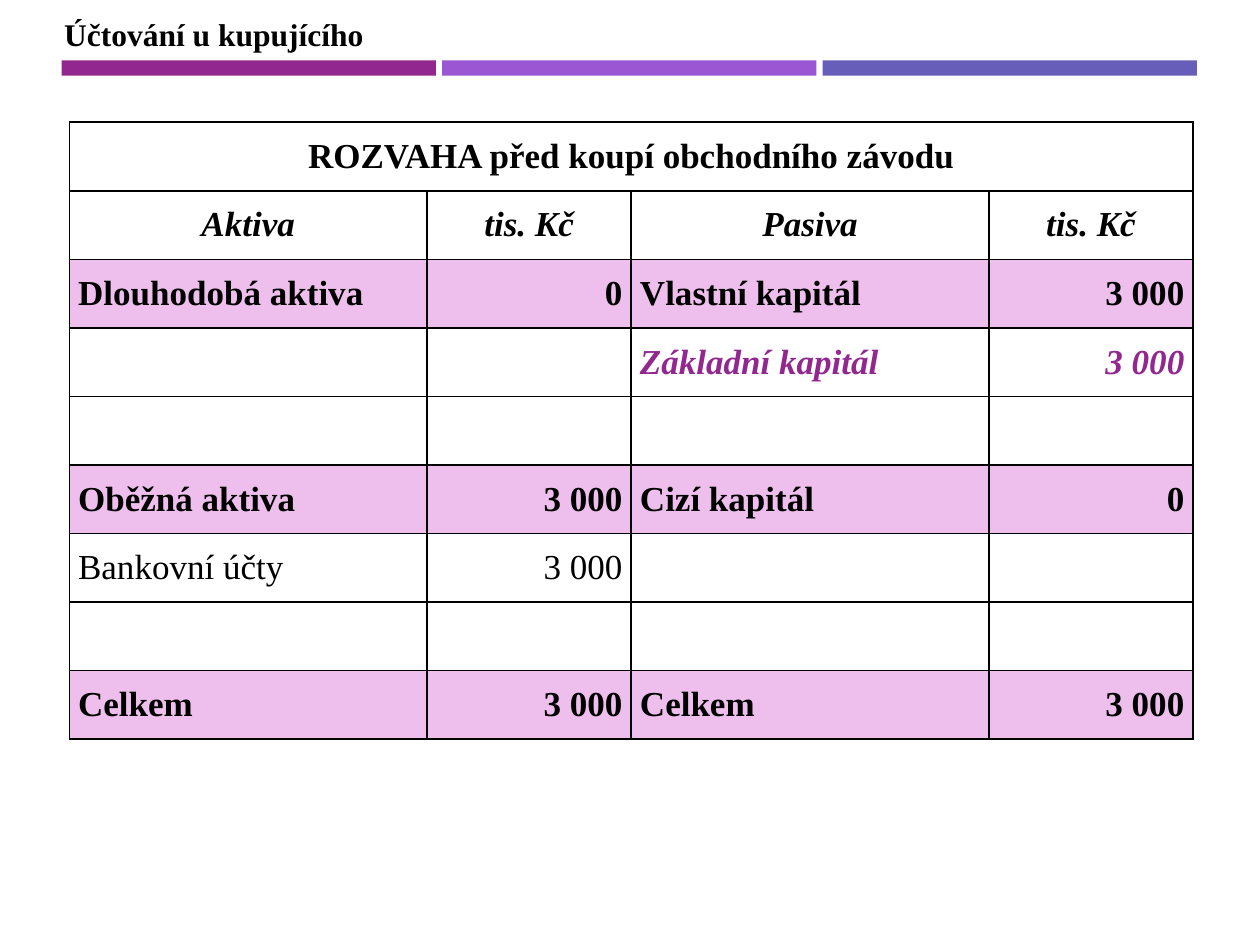
from typing import NamedTuple

from lxml.etree import SubElement
from pptx import Presentation
from pptx.dml.color import RGBColor
from pptx.enum.shapes import MSO_SHAPE as Shape
from pptx.enum.text import MSO_ANCHOR as Anchor, MSO_AUTO_SIZE as Fit, PP_ALIGN as Align
from pptx.oxml.ns import qn
from pptx.util import Inches, Pt

FONT = "Times New Roman"
BLACK = RGBColor(0x00, 0x00, 0x00)
WHITE = RGBColor(0xFF, 0xFF, 0xFF)
PLUM = RGBColor(0x92, 0x27, 0x8F)
VIOLET = RGBColor(0x9B, 0x57, 0xD3)
INDIGO = RGBColor(0x66, 0x5E, 0xB8)
PINK = RGBColor(0xEE, 0xBF, 0xED)


class Row(NamedTuple):
    texts: tuple[str, ...]
    fill: RGBColor | None = None
    color: RGBColor = BLACK
    bold: bool = True
    italic: bool = False
    center: bool = False


HEAD = "ROZVAHA před koupí obchodního závodu"
BLANK = Row(("", "", "", ""))
ROWS = [
    Row((HEAD, "", "", ""), center=True),
    Row(("Aktiva", "tis. Kč", "Pasiva", "tis. Kč"), italic=True, center=True),
    Row(("Dlouhodobá aktiva", "0", "Vlastní kapitál", "3 000"), PINK),
    Row(("", "", "Základní kapitál", "3 000"), color=PLUM, italic=True),
    BLANK,
    Row(("Oběžná aktiva", "3 000", "Cizí kapitál", "0"), PINK),
    Row(("Bankovní účty", "3 000", "", ""), bold=False),
    BLANK,
    Row(("Celkem", "3 000", "Celkem", "3 000"), PINK),
]
COLS = (2.84, 1.62, 2.84, 1.62)
ALIGNS = (Align.LEFT, Align.RIGHT, Align.JUSTIFY, Align.RIGHT)
ROW_H = 4.9 / len(ROWS)


def add_bars(slide) -> None:
    for i, color in enumerate((PLUM, VIOLET, INDIGO)):
        bar = slide.shapes.add_shape(
            Shape.RECTANGLE, Inches(0.49 + 3.02 * i), Inches(0.48), Inches(2.97), Inches(0.12))
        bar.shadow.inherit = False
        bar.fill.solid()
        bar.fill.fore_color.rgb = color
        bar.line.fill.background()


def set_title(slide, text: str) -> None:
    title = slide.shapes.title
    title.left, title.top = Inches(0.41), Inches(0.07)
    title.width, title.height = Inches(2.6), Inches(0.4)
    frame = title.text_frame
    frame.text = text
    frame.word_wrap = False
    frame.auto_size = Fit.SHAPE_TO_FIT_TEXT
    frame.vertical_anchor = Anchor.TOP
    para = frame.paragraphs[0]
    para.alignment = Align.LEFT
    style(para.runs[0].font, 18, BLACK, True)


def style(font, size: float, color: RGBColor, bold: bool, italic: bool = False) -> None:
    font.name, font.size = FONT, Pt(size)
    font.bold, font.italic = bold, italic
    font.color.rgb = color


def add_border(cell) -> None:
    props = cell._tc.get_or_add_tcPr()
    for side in ("a:lnL", "a:lnR", "a:lnT", "a:lnB"):
        line = SubElement(props, qn(side), w=str(Pt(1)))
        fill = SubElement(line, qn("a:solidFill"))
        SubElement(fill, qn("a:srgbClr"), val=str(BLACK))


def fill_cell(cell, row: Row, text: str, align: Align) -> None:
    add_border(cell)
    if row.fill:
        cell.fill.solid()
        cell.fill.fore_color.rgb = row.fill
    else:
        cell.fill.background()
    cell.margin_left = cell.margin_right = Inches(0.07)
    cell.margin_top = cell.margin_bottom = 0
    cell.vertical_anchor = Anchor.MIDDLE
    if text:
        cell.text_frame.text = text
        para = cell.text_frame.paragraphs[0]
        para.alignment = Align.CENTER if row.center else align
        style(para.runs[0].font, 20, row.color, row.bold, row.italic)


def add_sheet(slide) -> None:
    table = slide.shapes.add_table(
        len(ROWS), len(COLS), Inches(0.55), Inches(0.97),
        Inches(sum(COLS)), Inches(ROW_H * len(ROWS))).table
    table.first_row = table.horz_banding = False
    for col, width in zip(table.columns, COLS):
        col.width = Inches(width)
    for r, row in enumerate(ROWS):
        table.rows[r].height = Inches(ROW_H)
        for c, (text, align) in enumerate(zip(row.texts, ALIGNS)):
            fill_cell(table.cell(r, c), row, text, align)
    table.cell(0, 0).merge(table.cell(0, len(COLS) - 1))


def main() -> None:
    deck = Presentation()
    deck.slide_width, deck.slide_height = Inches(10), Inches(7.5)
    slide = deck.slides.add_slide(deck.slide_layouts[5])
    slide.background.fill.solid()
    slide.background.fill.fore_color.rgb = WHITE

    # Heading with the tricolour rule below it
    set_title(slide, "Účtování u kupujícího")
    add_bars(slide)

    # Balance sheet
    add_sheet(slide)
    deck.save("out.pptx")


if __name__ == "__main__":
    main()
